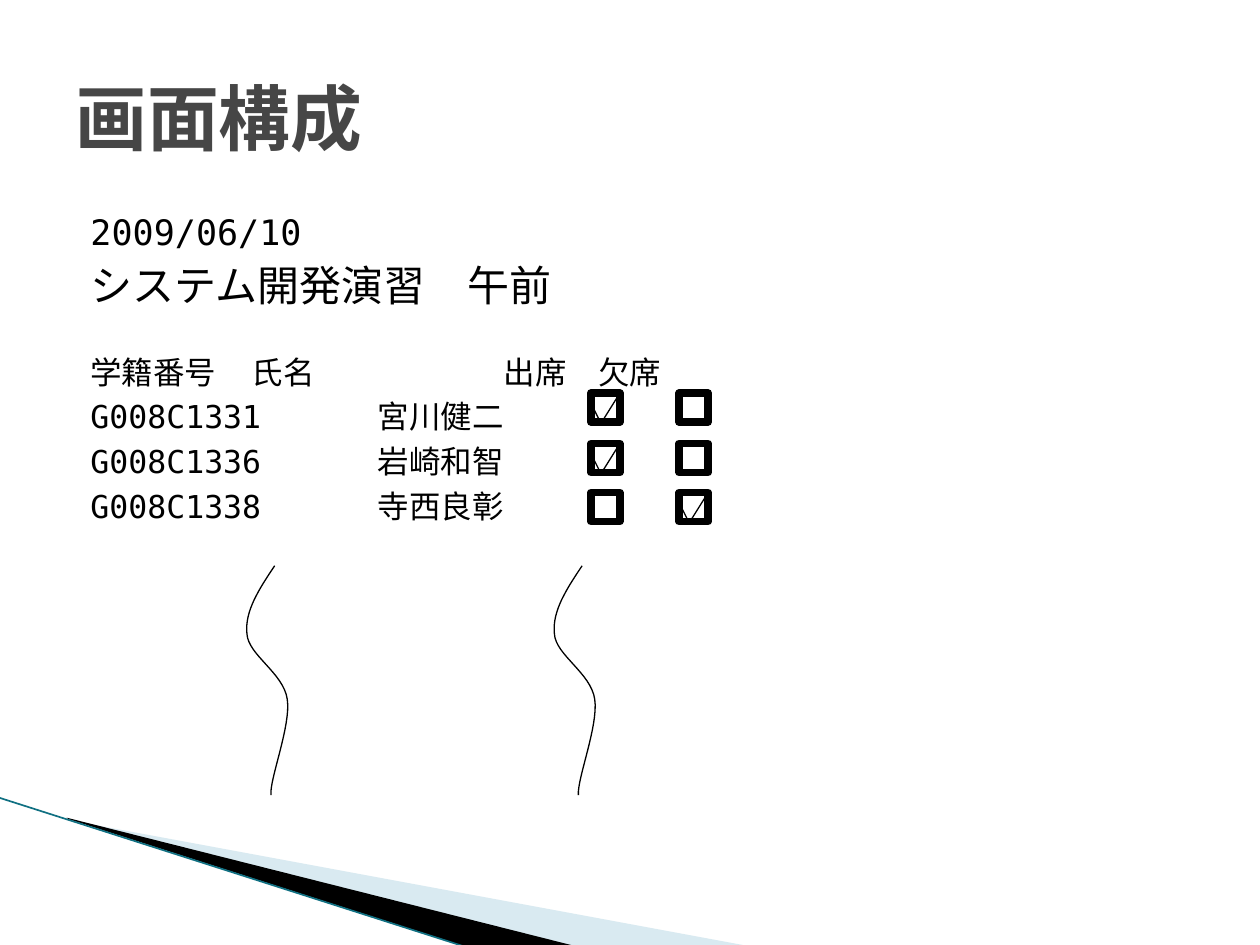
from typing import NamedTuple

from lxml import etree
from pptx import Presentation
from pptx.dml.color import RGBColor
from pptx.enum.shapes import MSO_CONNECTOR, MSO_SHAPE
from pptx.enum.text import MSO_ANCHOR
from pptx.oxml.ns import qn
from pptx.util import Inches, Pt

RECT = MSO_SHAPE.RECTANGLE
STRAIGHT = MSO_CONNECTOR.STRAIGHT
MIDDLE, TOP = MSO_ANCHOR.MIDDLE, MSO_ANCHOR.TOP
FONT = "DejaVu Sans Mono"
BLACK = "000000"
BOX = 0.23
STEPS = 16

Point = tuple[float, float]


class Wedge(NamedTuple):
    points: list[Point]
    color: str
    alpha: int


class Line(NamedTuple):
    text: str
    size: float
    before: float


class Row(NamedTuple):
    top: float
    tick: int  # column that carries the check mark


WEDGES = [
    Wedge([(0.55, 6.51), (5.95, 7.51), (4.56, 7.51), (0.55, 6.5)], "A0CBDC", 40),
    Wedge([(0.53, 6.49), (4.57, 7.51), (3.72, 7.52), (0.54, 6.5)], BLACK, 100),
]
LINES = [
    Line("2009/06/10", 20, 0),
    Line("システム開発演習　午前", 24, 4),
    Line("学籍番号\t氏名\t\t出席　欠席", 18, 24.5),
    Line("G008C1331\t宮川健二", 18, 4),
    Line("G008C1336\t岩崎和智", 18, 4),
    Line("G008C1338\t寺西良彰", 18, 4),
]
COLUMNS = [4.69, 5.39]
ROWS = [Row(3.12, 0), Row(3.52, 0), Row(3.91, 1)]
TICK = [(0, 0.08), (0.08, 0.24), (BOX, 0)]
# Start point, then two handles and an end for each curve
WAVE = [
    (2.18, 4.49), (2.06, 4.67), (1.94, 4.85), (1.96, 5.03),
    (1.97, 5.2), (2.25, 5.34), (2.28, 5.55),
    (2.31, 5.76), (2.14, 6.18), (2.15, 6.31),
]
SHIFTS = [0, 2.44]


def paint(color: str) -> RGBColor:
    return RGBColor.from_string(color)


def stroke(shape, color: str, width: float) -> None:
    shape.line.color.rgb = paint(color)
    shape.line.width = Pt(width)


def add_path(shapes, points: list[Point], close: bool):
    ends = [(Inches(x), Inches(y)) for x, y in points]
    draft = shapes.build_freeform(*ends[0], scale=1.0)
    draft.add_line_segments(ends[1:], close=close)
    shape = draft.convert_to_shape()
    shape.shadow.inherit = False
    return shape


def add_wedge(shapes, wedge: Wedge) -> None:
    shape = add_path(shapes, wedge.points, True)
    shape.fill.solid()
    shape.fill.fore_color.rgb = paint(wedge.color)
    shape.line.fill.background()
    if wedge.alpha < 100:
        color = shape.fill._xPr.find(".//" + qn("a:srgbClr"))
        etree.SubElement(color, qn("a:alpha"), val=str(wedge.alpha * 1000))


def add_line(shapes, start: Point, end: Point, color: str, width: float) -> None:
    ends = [Inches(n) for n in (*start, *end)]
    line = shapes.add_connector(STRAIGHT, *ends)
    stroke(line, color, width)
    etree.SubElement(line._element.spPr, qn("a:effectLst"))


def add_frame(shapes, left: float, top: float, width: float, height: float, anchor):
    box = shapes.add_textbox(*[Inches(n) for n in (left, top, width, height)])
    frame = box.text_frame
    frame.word_wrap = True
    frame.vertical_anchor = anchor
    return frame


def style(par, size: float, color: str, bold: bool = False) -> None:
    for run in par.runs:
        run.font.name = FONT
        run.font.size = Pt(size)
        run.font.bold = bold
        run.font.color.rgb = paint(color)


def add_list(shapes, lines: list[Line]) -> None:
    frame = add_frame(shapes, 0.5, 1.62, 9, 4.95, TOP)
    frame.text = "\n".join(line.text for line in lines)
    for par, line in zip(frame.paragraphs, lines):
        props = par._p.get_or_add_pPr()
        props.set("marL", str(Inches(0.4)))
        props.set("indent", str(Inches(-0.28)))
        props.set("defTabSz", str(Inches(1)))
        par.space_before = Pt(line.before)
        style(par, line.size, BLACK)


def add_check(shapes, left: float, top: float) -> None:
    group = shapes.add_group_shape()
    points = [(left + x, top + y) for x, y in TICK]
    for start, end in zip(points, points[1:]):
        add_line(group.shapes, start, end, BLACK, 0.75)


def add_box(shapes, left: float, top: float) -> None:
    box = shapes.add_shape(RECT, Inches(left), Inches(top), Inches(BOX), Inches(BOX))
    box.shadow.inherit = False
    box.fill.background()
    stroke(box, BLACK, 4.33)


def bend(knots: list[Point]) -> list[Point]:
    """Points along a chain of cubic curves."""
    points = [knots[0]]
    for i in range(0, len(knots) - 1, 3):
        for step in range(1, STEPS + 1):
            t = step / STEPS
            u = 1 - t
            mix = (u**3, 3 * u * u * t, 3 * u * t * t, t**3)
            part = list(zip(mix, knots[i:i + 4]))
            points.append((sum(m * p[0] for m, p in part),
                           sum(m * p[1] for m, p in part)))
    return points


def add_wave(shapes, shift: float) -> None:
    points = [(x + shift, y) for x, y in bend(WAVE)]
    wave = add_path(shapes, points, False)
    wave.fill.background()
    stroke(wave, BLACK, 0.75)


def main() -> None:
    deck = Presentation()
    deck.slide_width, deck.slide_height = Inches(10), Inches(7.5)
    shapes = deck.slides.add_slide(deck.slide_layouts[6]).shapes

    # Corner decoration
    for wedge in WEDGES:
        add_wedge(shapes, wedge)
    add_line(shapes, (-0.01, 6.33), (3.71, 7.52), "107082", 0.95)

    # Title and attendance list
    add_list(shapes, LINES)
    title = add_frame(shapes, 0.5, 0.3, 9, 1.25, MIDDLE)
    title.text = "画面構成"
    style(title.paragraphs[0], 41, "464646", True)

    # Check boxes and marks
    for row in ROWS:
        for left in COLUMNS:
            add_box(shapes, left, row.top)
    for row in ROWS:
        add_check(shapes, COLUMNS[row.tick], row.top)

    # Wavy lines for the rows left out
    for shift in SHIFTS:
        add_wave(shapes, shift)

    deck.save("out.pptx")


if __name__ == "__main__":
    main()
